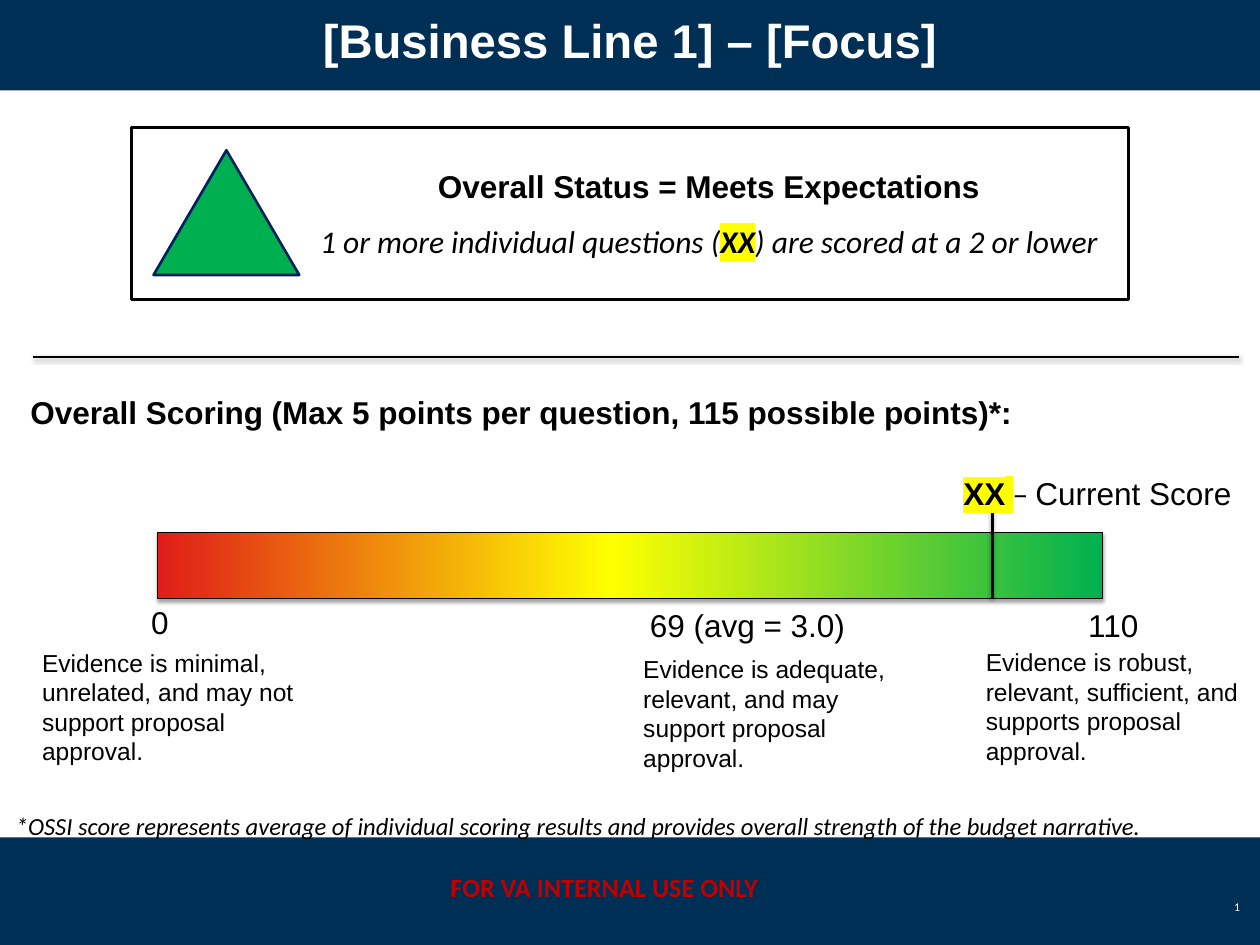
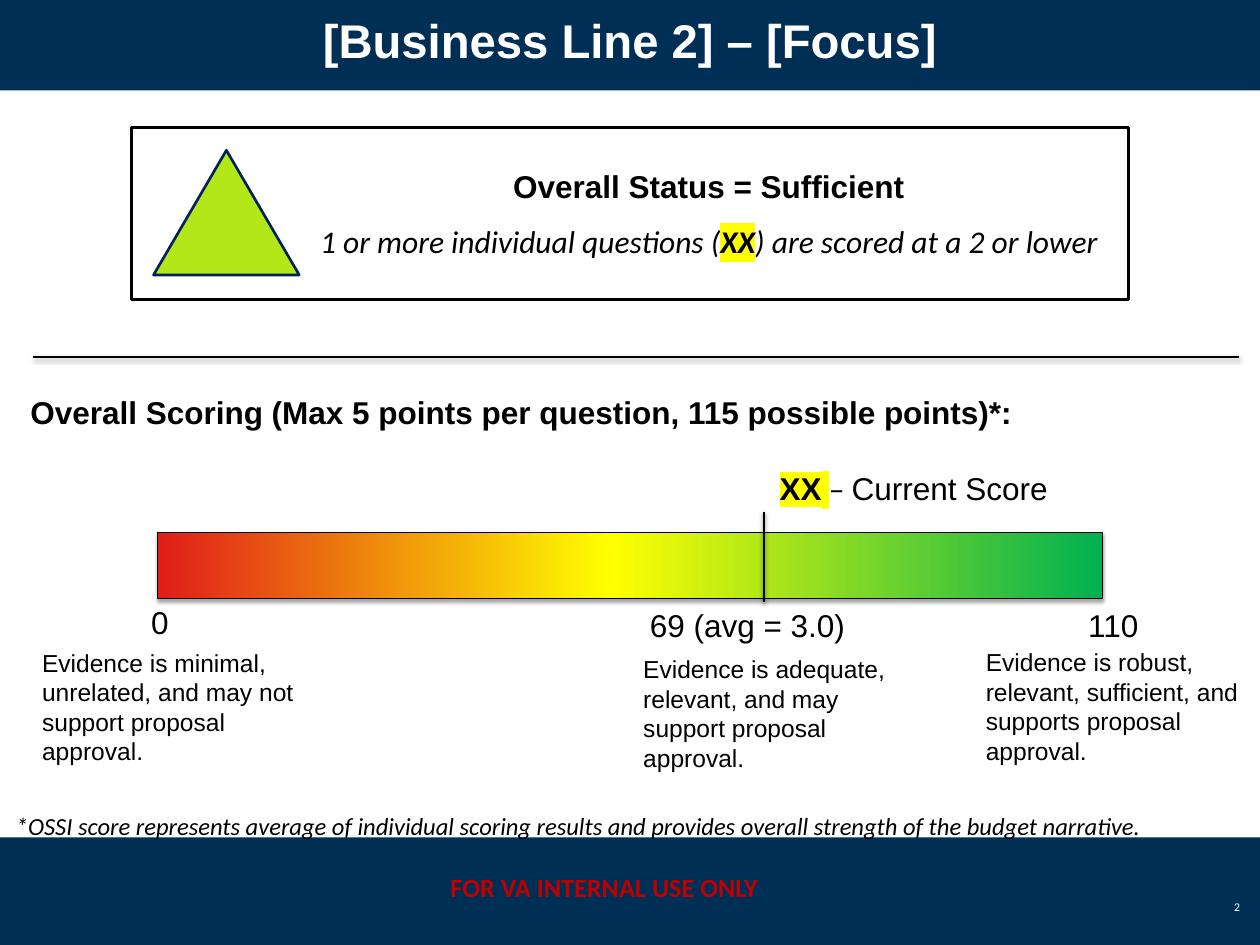
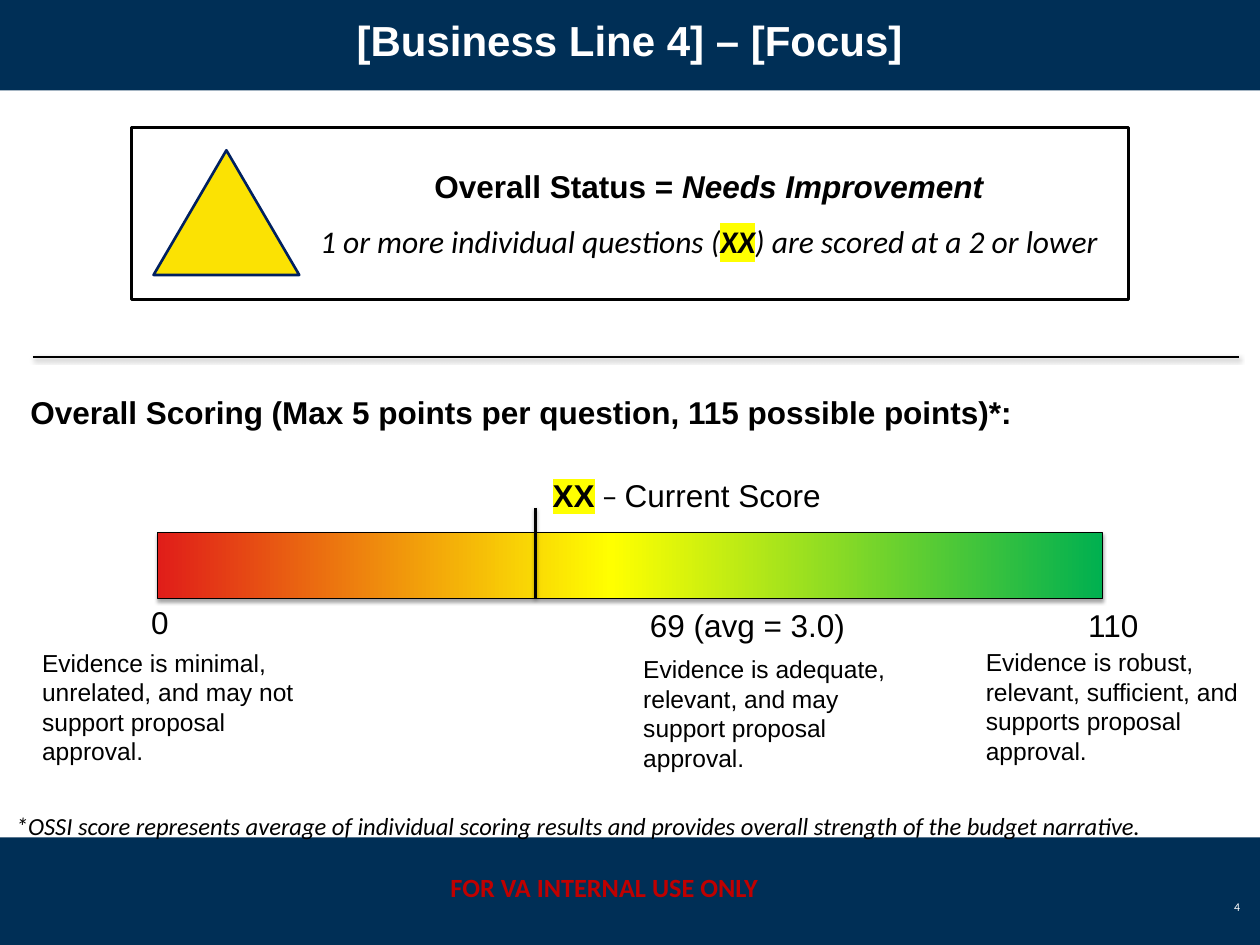
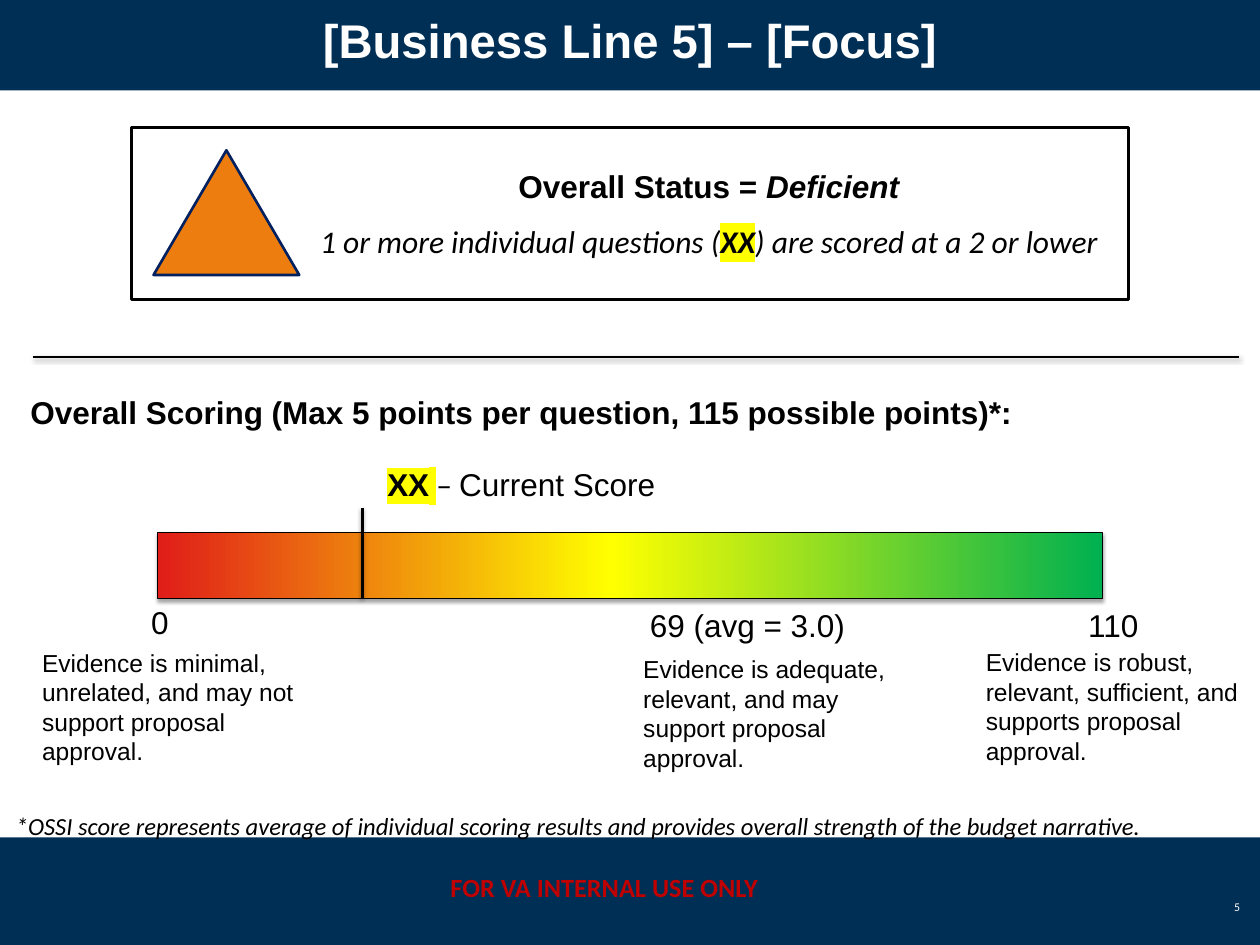
"""Builds four business line status slides with a score bar."""
from copy import deepcopy
from lxml import etree
from pptx import Presentation
from pptx.dml.color import RGBColor
from pptx.enum import shapes, text
from pptx.oxml.ns import qn
from pptx.util import Pt

HUES = {
    "navy": "002F56", "edge": "002060", "white": "FFFFFF", "black": "000000",
    "alert": "C00000", "mark": "FFFF00", "red": "E01D19", "green": "00B050",
    "lime": "B3E718", "gold": "FBE203", "orange": "ED7D0E",
}
RGB = {name: RGBColor.from_string(hue) for name, hue in HUES.items()}
KIND = shapes.MSO_SHAPE


def write(box, *lines, align="LEFT", anchor="TOP", gap=0, **base):
    """Fill a box with lines of (words, format) runs over a base format."""
    frame = box.text_frame
    frame.word_wrap = True
    frame.vertical_anchor = getattr(text.MSO_ANCHOR, anchor)
    for i, runs in enumerate(lines):
        para = frame.add_paragraph() if i else frame.paragraphs[0]
        para.alignment = getattr(text.PP_ALIGN, align)
        if i and gap:
            para.space_before = Pt(gap)
        for words, own in runs:
            look = {"face": "Arial", "hue": "black", "size": 24, **base, **own}
            run = para.add_run()
            run.text = words
            font = run.font
            font.name, font.size = look["face"], Pt(look["size"])
            font.bold, font.italic = look.get("bold", False), look.get("slant", False)
            font.color.rgb = RGB[look["hue"]]
            if look.get("mark"):
                mark = etree.Element(qn("a:highlight"))
                etree.SubElement(mark, qn("a:srgbClr"), val=HUES["mark"])
                font.fill  # noqa
                run.font.color.rgb = RGB[look["hue"]]
                run._r.rPr.find(qn("a:solidFill")).addnext(mark)


def shade(item, drop, alpha):
    """Give a shape or line a soft shadow straight below it."""
    props = item.element.spPr
    for old in props.findall(qn("a:effectLst")):
        props.remove(old)
    list_ = etree.SubElement(props, qn("a:effectLst"))
    glow = etree.SubElement(list_, qn("a:outerShdw"), blurRad=str(Pt(3.1)),
                            dist=str(Pt(drop)), dir="5400000", rotWithShape="0")
    tint = etree.SubElement(glow, qn("a:srgbClr"), val=HUES["black"])
    etree.SubElement(tint, qn("a:alpha"), val=str(alpha * 1000))


CASES = [
    dict(num=1, size=36, fill="green", state="Meets Expectations", slant=False,
         mark=(756, 387), score=(727, 358), wide=True),
    dict(num=2, size=36, fill="lime", state="Sufficient", slant=False,
         mark=(582, 390), score=(587, 354), wide=True),
    dict(num=4, size=32, fill="gold", state="Needs Improvement", slant=True,
         mark=(408, 387), score=(414, 359), wide=False),
    dict(num=5, size=36, fill="orange", state="Deficient", slant=True,
         mark=(276, 387), score=(288, 351), wide=True),
]
NOTES = [
    ((25, 490, 221, 98), 18.7,
     "Evidence is minimal, unrelated, and may not support proposal approval."),
    ((483, 495, 207, 98), 18.7,
     "Evidence is adequate, relevant, and may support proposal approval."),
    ((744, 489.5, 237, 98), 18.7,
     "Evidence is robust, relevant, sufficient, and supports proposal approval."),
    ((108, 456, 24, 36), 24, "0"),
    ((488, 458.5, 176, 36), 24, "69 (avg = 3.0)"),
    ((822, 458.5, 64, 36), 24, "110"),
]
STOPS = [(0, "red"), (0.48, "mark"), (1, "green")]
HEAD = [Pt(n) for n in (0, -8, 960, 77)]

deck = Presentation()
deck.slide_width, deck.slide_height = Pt(960), Pt(720)
plan = deck.slide_layouts[5]
title = plan.shapes.title if hasattr(plan.shapes, "title") else plan.placeholders[0]
title.left, title.top, title.width, title.height = HEAD
pages = [deck.slides.add_slide(plan) for _ in CASES]

draw = pages[0].shapes
foot = [Pt(n) for n in (0, 638, 960, 82)]
bands = [draw.add_shape(KIND.RECTANGLE, *at) for at in (HEAD, foot)]
for band in bands:
    band.shadow.inherit = False
    band.fill.solid()
    band.fill.fore_color.rgb = RGB["navy"]
    band.line.fill.background()
label = draw.add_textbox(Pt(336), Pt(660), Pt(249), Pt(32))
write(label, [("FOR VA INTERNAL USE ONLY", {})], align="CENTER",
      face="Calibri", size=20, hue="alert", bold=True)
for item in (*bands, label):
    plan.shapes.element.append(item.element)

for page, case in zip(pages, CASES):
    draw = page.shapes
    write(draw.title, [(f"[Business Line {case['num']}] – [Focus]", {})],
          align="CENTER", anchor="MIDDLE", size=case["size"], hue="white", bold=True)

    for kind, at, fill, edge in [
        (KIND.RECTANGLE, (100, 97, 760, 131), "white", "black"),
        (KIND.ISOSCELES_TRIANGLE, (117, 114.5, 111, 95), case["fill"], "edge"),
    ]:
        form = draw.add_shape(kind, *map(Pt, at))
        form.shadow.inherit = False
        form.fill.solid()
        form.fill.fore_color.rgb = RGB[fill]
        form.line.color.rgb, form.line.width = RGB[edge], Pt(2)

    soft = {"face": "Calibri", "slant": True}
    box = draw.add_textbox(Pt(224), Pt(124), Pt(632), Pt(78))
    write(box,
          [("Overall Status = ", {"bold": True}),
           (case["state"], {"bold": True, "slant": case["slant"]})],
          [("1 or more individual questions (", soft),
           ("XX", {**soft, "bold": True, "mark": True}),
           (") are scored at a 2 or lower", soft)],
          align="CENTER", gap=12.5)

    box = draw.add_textbox(Pt(16), Pt(296), Pt(912), Pt(36))
    write(box, [("Overall Scoring (Max 5 points per question, 115 possible points)*:", {})],
          bold=True)

    bar = draw.add_shape(KIND.RECTANGLE, Pt(120), Pt(406), Pt(720), Pt(50))
    bar.fill.gradient()
    bar.fill.gradient_angle = 0
    first = bar.element.spPr.find(".//" + qn("a:gs"))
    first.addnext(deepcopy(first))
    for stop, (place, hue) in zip(bar.fill.gradient_stops, STOPS):
        stop.position, stop.color.rgb = place, RGB[hue]
    bar.line.color.rgb, bar.line.width = RGB["black"], Pt(0.75)
    shade(bar, 1.8, 35)

    left, top = case["mark"]
    for ends in [(25, 272, 944, 272), (left, top, left, top + 69)]:
        rule = draw.add_connector(shapes.MSO_CONNECTOR.STRAIGHT, *map(Pt, ends))
        rule.line.color.rgb, rule.line.width = RGB["black"], Pt(2)
        shade(rule, 1.6, 38)

    box = draw.add_textbox(*map(Pt, case["score"]), Pt(252), Pt(36))
    write(box, [("XX", {"bold": True, "mark": True}),
                (" ", {"face": "Calibri", "mark": case["wide"]}),
                ("– ", {"face": "Calibri"}), ("Current Score", {})])

    for at, size, words in NOTES:
        write(draw.add_textbox(*map(Pt, at)), [(words, {})], size=size)

    box = draw.add_textbox(Pt(5), Pt(614), Pt(948), Pt(30))
    write(box, [("*OSSI score represents average of individual scoring results and "
                 "provides overall strength of the budget narrative.", soft)], size=18.7)
    box = draw.add_textbox(Pt(912), Pt(672), Pt(40), Pt(38))
    write(box, [(str(case["num"]), {})], align="RIGHT", anchor="MIDDLE",
          face="Calibri", size=9, hue="white")

deck.save("out.pptx")
